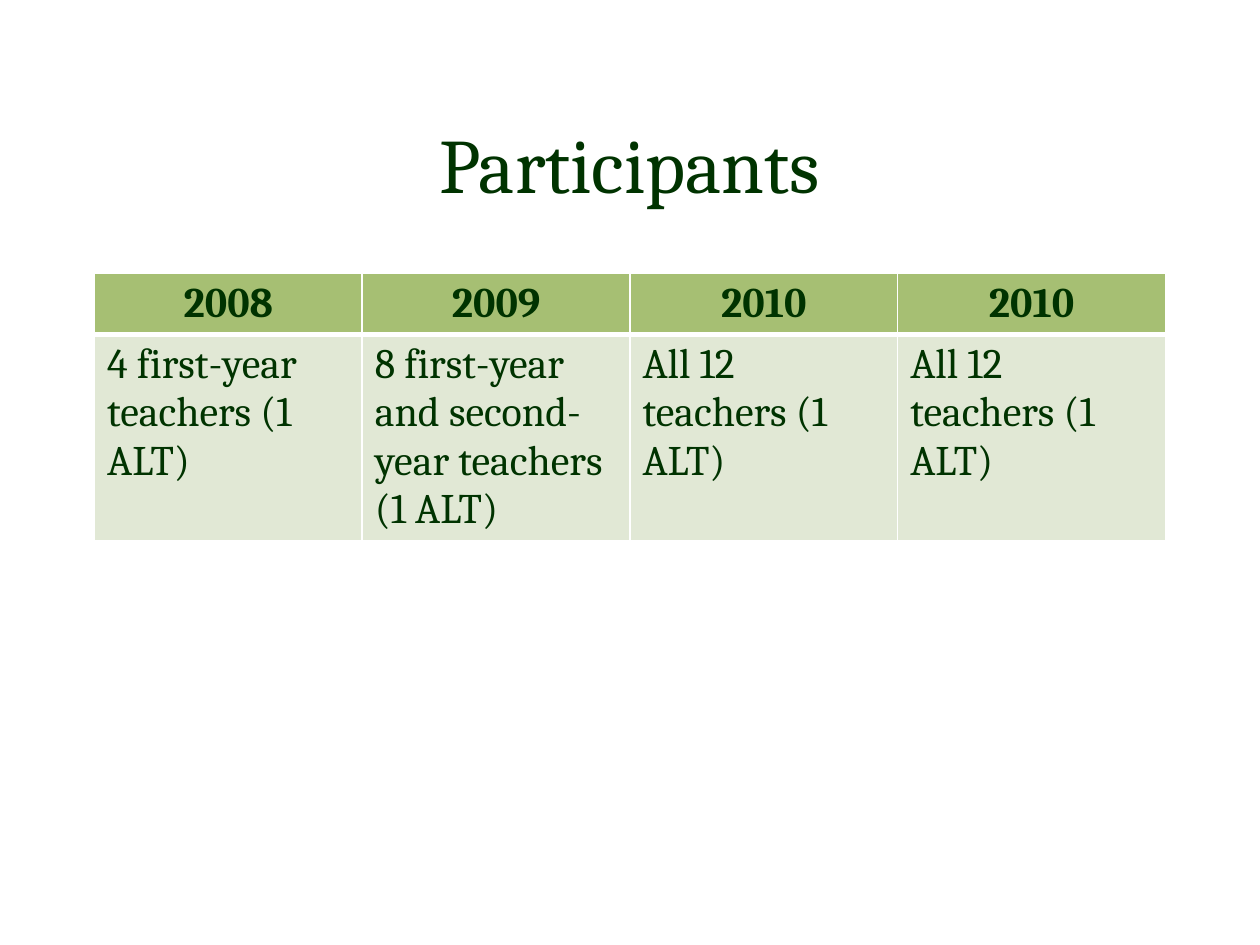
from dataclasses import dataclass

from lxml import etree
from pptx import Presentation
from pptx.dml.color import RGBColor
from pptx.enum.text import MSO_ANCHOR, PP_ALIGN
from pptx.oxml.ns import qn
from pptx.util import Inches, Pt

CENTER, LEFT = PP_ALIGN.CENTER, PP_ALIGN.LEFT
MIDDLE = MSO_ANCHOR.MIDDLE
FONT = "Cambria"
COLORS = {"text": "003300", "header": "A6BF73", "body": "E1E8D5", "border": "FFFFFF"}


@dataclass
class RowStyle:
    fill: str
    align: PP_ALIGN
    bold: bool
    bottom: int  # bottom border width in points


HEADER = RowStyle("header", CENTER, True, 3)
BODY = RowStyle("body", LEFT, False, 1)

ROWS = [
    (HEADER, ["2008", "2009", "2010", "2010"]),
    (BODY, ["4 first-year teachers (1 ALT)",
            "8 first-year and second-year teachers (1 ALT)",
            "All 12 teachers (1 ALT)",
            "All 12 teachers (1 ALT)"]),
]


def write(tf, text: str, size: int, align: PP_ALIGN, bold: bool = False) -> None:
    p = tf.paragraphs[0]
    p.alignment = align
    r = p.add_run()
    r.text = text
    r.font.name = FONT
    r.font.size = Pt(size)
    r.font.bold = bold
    r.font.color.rgb = RGBColor.from_string(COLORS["text"])


def set_borders(cell, bottom: int, top: int) -> None:
    tcPr = cell._tc.get_or_add_tcPr()
    widths = {"a:lnL": 1, "a:lnR": 1, "a:lnT": top, "a:lnB": bottom}
    for i, (tag, width) in enumerate(widths.items()):
        ln = etree.Element(qn(tag), w=str(Pt(width)))
        fill = etree.SubElement(ln, qn("a:solidFill"))
        etree.SubElement(fill, qn("a:srgbClr"), val=COLORS["border"])
        tcPr.insert(i, ln)  # borders come before the fill


def fill_cell(cell, text: str, style: RowStyle, top: int) -> None:
    cell.fill.solid()
    cell.fill.fore_color.rgb = RGBColor.from_string(COLORS[style.fill])
    set_borders(cell, style.bottom, top)
    write(cell.text_frame, text, 24, style.align, style.bold)


def main() -> None:
    prs = Presentation()
    prs.slide_width, prs.slide_height = Inches(10), Inches(7.5)
    s = prs.slides.add_slide(prs.slide_layouts[5])

    # Title
    title = s.shapes.title
    title.left, title.top = Inches(0.75), Inches(0.67)
    title.width, title.height = Inches(8.5), Inches(1.25)
    title.text_frame.vertical_anchor = MIDDLE
    write(title.text_frame, "Participants", 44, CENTER)

    # Participants by year
    frame = s.shapes.add_table(len(ROWS), len(ROWS[0][1]), Inches(0.75),
                               Inches(2.17), Inches(8.5), Inches(1.41))
    table = frame.table
    top = 1
    for i, (style, texts) in enumerate(ROWS):
        table.rows[i].height = Inches(0.41)
        for j, text in enumerate(texts):
            fill_cell(table.cell(i, j), text, style, top)
        top = style.bottom  # neighbouring rows share a border
    frame.height = Inches(1.41)

    prs.save("out.pptx")


if __name__ == "__main__":
    main()
